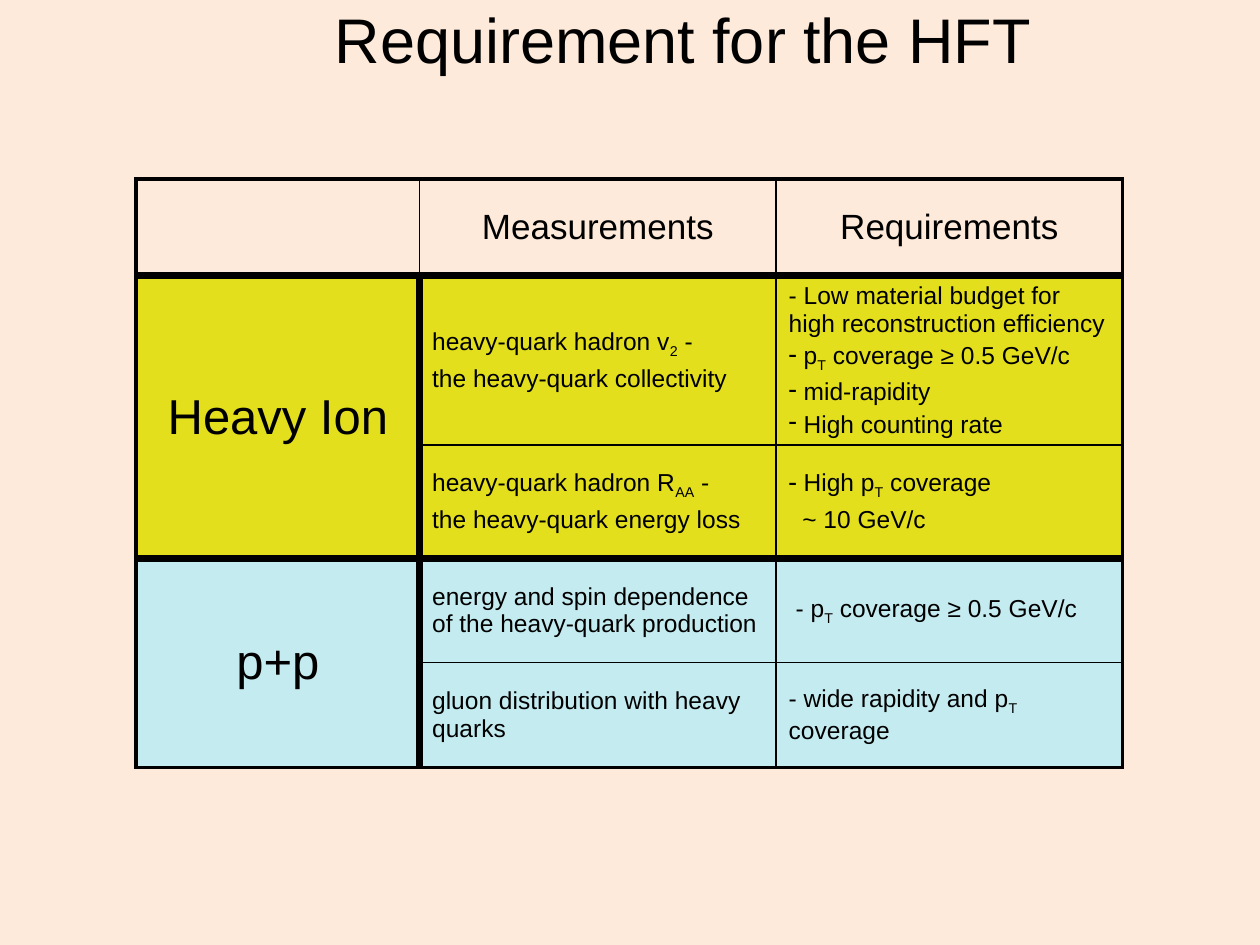
from lxml import etree
from pptx import Presentation
from pptx import util as u
from pptx.dml import color
from pptx.enum import text
from pptx.oxml import ns

INK, SAND, LIME, SKY = "000000", "FDEADA", "E3DF1C", "C4EBF0"
COLS = (22.5, 28.3, 27.5)
ROWS = (10.27, 10.27, 12, 11.07, 11.07)
FILLS = (None, LIME, LIME, SKY, SKY)
SPANS = {(1, 0): 2, (3, 0): 2}
LINES = (2.25, 4.5, 1, 4.5, 1, 2.25)
HEAD_RULES = (2.25, 1, 1, 2.25)
BODY_RULES = (2.25, 4.5, 1, 2.25)
TEXTS = (
    ((), ("Measurements",), ("Requirements",)),
    (("Heavy Ion",),
     ("heavy-quark hadron v|2| -", "the heavy-quark collectivity"),
     ("- Low material budget for high reconstruction efficiency",
      "* p|T| coverage ≥ 0.5 GeV/c", "* mid-rapidity", "* High counting rate")),
    ((),
     ("heavy-quark hadron R|AA| -", "the heavy-quark energy loss"),
     ("* High p|T| coverage", "  ~ 10 GeV/c")),
    (("p+p",),
     ("energy and spin dependence of the heavy-quark production",),
     (" - p|T| coverage ≥ 0.5 GeV/c",)),
    ((),
     ("gluon distribution with heavy quarks",),
     ("- wide rapidity and p|T| coverage",)),
)


def rgb(hue):
    """Turn a hex string into a colour."""
    return color.RGBColor.from_string(hue)


def node(up, tag, **attrs):
    """Append a drawing element to its parent and return it."""
    return etree.SubElement(up, ns.qn("a:" + tag), **attrs)


def write(frame, lines, size=14, hue=INK, font="Arial", mid=False, gap=True):
    """Write lines; bars enclose subscripts and a star starts a dash bullet."""
    for i, line in enumerate(lines):
        para = frame.paragraphs[0] if i == 0 else frame.add_paragraph()
        para.alignment = text.PP_ALIGN.CENTER if mid else text.PP_ALIGN.LEFT
        props = para._p.get_or_add_pPr()
        if gap:
            node(node(props, "spcBef"), "spcPct", val="20000")
        if line.startswith("*"):
            node(props, "buChar", char="-")
            line = line[1:]
        for j, part in enumerate(line.split("|")):
            run = para.add_run()
            run.text = part
            run.font.size, run.font.name = u.Pt(size), font
            run.font.color.rgb = rgb(hue)
            if j % 2:
                run.font._element.set("baseline", "-25000")


def edge(cell, widths):
    """Draw the left, right, top and bottom borders of a cell."""
    props = cell._tc.get_or_add_tcPr()
    for i, (side, width) in enumerate(zip("LRTB", widths)):
        line = node(props, "ln" + side, w=str(u.Pt(width)))
        node(node(line, "solidFill"), "srgbClr", val=INK)
        props.insert(i, line)


def heading(slide, box):
    """Place the title in its box."""
    title = slide.shapes.title
    title.left, title.top, title.width, title.height = box
    frame = title.text_frame
    frame.auto_size = text.MSO_AUTO_SIZE.NONE
    frame.vertical_anchor = text.MSO_ANCHOR.MIDDLE
    write(frame, ["Requirement for the HFT"], size=36, mid=True, gap=False)


def grid(slide, box):
    """Fill the box with the table of measurements and requirements."""
    left, top, wide, high = box
    table = slide.shapes.add_table(len(ROWS), len(COLS), left, top, wide, high).table
    table.first_row = table.horz_banding = False
    for col, share in zip(table.columns, COLS):
        col.width = int(wide * share / sum(COLS))
    for row, share in zip(table.rows, ROWS):
        row.height = int(high * share / sum(ROWS))
    for (r, c), span in SPANS.items():
        table.cell(r, c).merge(table.cell(r + span - 1, c))
    for r, texts in enumerate(TEXTS):
        rules = BODY_RULES if r else HEAD_RULES
        for c, lines in enumerate(texts):
            cell = table.cell(r, c)
            if cell.is_spanned:
                continue
            if FILLS[r]:
                cell.fill.solid()
                cell.fill.fore_color.rgb = rgb(FILLS[r])
            else:
                cell.fill.background()
            base = r + SPANS.get((r, c), 1)
            edge(cell, (rules[c], rules[c + 1], LINES[r], LINES[base]))
            full = len(lines) > 2
            cell.vertical_anchor = text.MSO_ANCHOR.TOP if full else text.MSO_ANCHOR.MIDDLE
            size = 20 if r == 0 else 28 if c == 0 else 14
            write(cell.text_frame, lines, size=size, mid=size > 14)


def main():
    """Build and save the slide."""
    deck = Presentation()
    deck.slide_width, deck.slide_height = u.Inches(10), u.Inches(7.5)

    def area(x, y, w, h):
        """Turn percentages of the slide into a box."""
        wide, high = deck.slide_width / 100, deck.slide_height / 100
        return int(x * wide), int(y * high), int(w * wide), int(h * high)

    slide = deck.slides.add_slide(deck.slide_layouts[5])
    slide.background.fill.solid()
    slide.background.fill.fore_color.rgb = rgb(SAND)
    grid(slide, area(10.8, 18.93, sum(COLS), sum(ROWS)))
    heading(slide, area(11.7, -6.67, 85, 21.47))
    deck.save("out.pptx")


if __name__ == "__main__":
    main()
